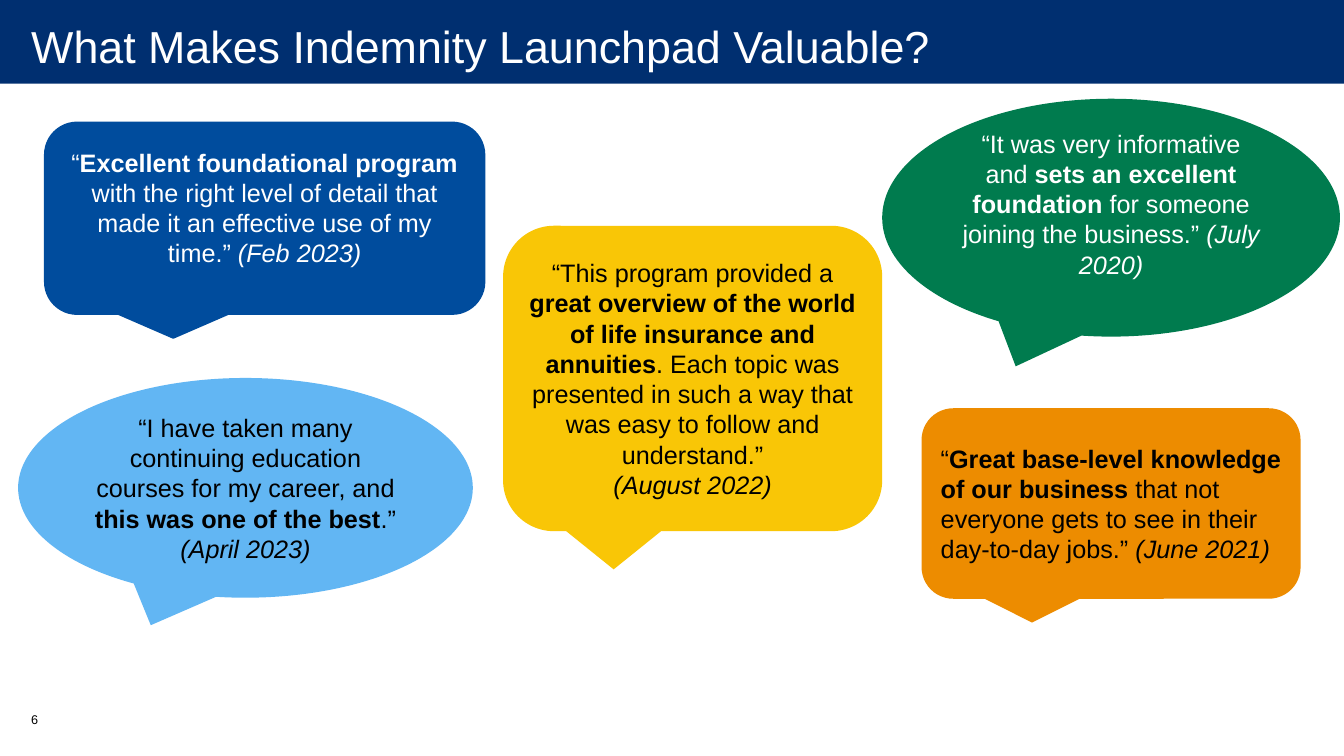
from pptx import Presentation
from pptx.dml.color import RGBColor
from pptx.enum.shapes import MSO_SHAPE
from pptx.enum.text import MSO_ANCHOR, PP_ALIGN
from pptx.util import Pt

EMU_PER_PX = 9144
SLIDE_WIDTH, SLIDE_HEIGHT = 1333, 750
FONT = "Arial"

BAR = MSO_SHAPE.RECTANGLE
ROUNDED = MSO_SHAPE.ROUNDED_RECTANGULAR_CALLOUT
OVAL = MSO_SHAPE.OVAL_CALLOUT
LEFT, CENTER = PP_ALIGN.LEFT, PP_ALIGN.CENTER
TOP, MIDDLE = MSO_ANCHOR.TOP, MSO_ANCHOR.MIDDLE

WHITE = RGBColor(0xFF, 0xFF, 0xFF)
BLACK = RGBColor(0x00, 0x00, 0x00)
NAVY = RGBColor(0x00, 0x2F, 0x70)
BLUE = RGBColor(0x00, 0x4C, 0x9D)
SKY = RGBColor(0x62, 0xB6, 0xF3)
YELLOW = RGBColor(0xF9, 0xC6, 0x06)
GREEN = RGBColor(0x00, 0x7B, 0x4E)
ORANGE = RGBColor(0xED, 0x8C, 0x00)

PLAIN, BOLD, ITALIC = "plain", "bold", "italic"

FEB_2023 = [[
    ("“", PLAIN), ("Excellent foundational program ", BOLD),
    ("with the right level of detail that made it an effective use of my time.” ", PLAIN),
    ("(Feb 2023)", ITALIC),
]]
APRIL_2023 = [
    [("“I have taken many continuing education courses for my career, and ", PLAIN),
     ("this was one of the best", BOLD), (".”", PLAIN)],
    [("(April 2023)", ITALIC)],
]
AUGUST_2022 = [
    [("“This program provided a ", PLAIN),
     ("great overview of the world of life insurance and annuities", BOLD),
     (". Each topic was presented in such a way that was easy to follow and understand.”", PLAIN)],
    [("(August 2022)", ITALIC)],
]
JULY_2020 = [[
    ("“It was very informative and ", PLAIN), ("sets an excellent foundation ", BOLD),
    ("for someone joining the business.” ", PLAIN), ("(July 2020)", ITALIC),
]]
JUNE_2021 = [[
    ("“", PLAIN), ("Great base-level knowledge of our business ", BOLD),
    ("that not everyone gets to see in their day-to-day jobs.” ", PLAIN),
    ("(June 2021)", ITALIC),
]]


def px(*lengths):
    """Turn px lengths into EMU."""
    return [length * EMU_PER_PX for length in lengths]


def write(holder, paragraphs, size=18, color=BLACK, align=CENTER, anchor=MIDDLE,
          insets=(10, 5, 10, 5)):
    """Fill a shape or text box with paragraphs of (text, style) runs."""
    frame = holder.text_frame
    frame.word_wrap = True
    frame.vertical_anchor = anchor
    (frame.margin_left, frame.margin_top,
     frame.margin_right, frame.margin_bottom) = px(*insets)
    for index, runs in enumerate(paragraphs):
        paragraph = frame.add_paragraph() if index else frame.paragraphs[0]
        paragraph.alignment = align
        for text, style in runs:
            run = paragraph.add_run()
            run.text = text
            run.font.name = FONT
            run.font.size = Pt(size)
            run.font.color.rgb = color
            run.font.bold = style == BOLD
            run.font.italic = style == ITALIC


def add_label(slide, box, paragraphs, **text_format):
    """Add a text box."""
    label = slide.shapes.add_textbox(*px(*box))
    write(label, paragraphs, **text_format)


def add_panel(slide, outline, box, fill):
    """Add a flat filled shape without a border."""
    panel = slide.shapes.add_shape(outline, *px(*box))
    panel.shadow.inherit = False
    panel.fill.solid()
    panel.fill.fore_color.rgb = fill
    panel.line.fill.background()
    return panel


def add_quote(slide, outline, box, fill, paragraphs, **text_format):
    """Add a speech bubble holding a participant quote."""
    bubble = add_panel(slide, outline, box, fill)
    write(bubble, paragraphs, **text_format)


def main():
    """Build and save the slide."""
    deck = Presentation()
    deck.slide_width, deck.slide_height = px(SLIDE_WIDTH, SLIDE_HEIGHT)
    slide = deck.slides.add_slide(deck.slide_layouts[6])

    add_panel(slide, BAR, (0, 0, SLIDE_WIDTH, 83), NAVY)
    add_label(slide, (1, 0, 1332, 91), [[("What Makes Indemnity Launchpad Valuable?", PLAIN)]],
              size=32, color=WHITE, align=LEFT, insets=(30, 0, 20, 0))
    add_label(slide, (21, 701, 49, 40), [[("6", PLAIN)]], size=9, align=LEFT, anchor=TOP)

    february_bubble = add_panel(slide, ROUNDED, (45, 122, 435, 189), BLUE)
    february_bubble.line.color.rgb = BLUE
    february_bubble.line.width = Pt(2)
    add_label(slide, (56, 141, 413, 162), FEB_2023, color=WHITE, anchor=TOP)

    add_quote(slide, OVAL, (18, 375, 451, 218), SKY, APRIL_2023)
    add_quote(slide, ROUNDED, (499, 224, 376, 303), YELLOW, AUGUST_2022)
    add_quote(slide, OVAL, (875, 98, 454, 236), GREEN, JULY_2020,
              color=WHITE, insets=(10, 0, 10, 28))
    add_quote(slide, ROUNDED, (914, 405, 376, 189), ORANGE, JUNE_2021, align=LEFT)

    deck.save("out.pptx")


if __name__ == "__main__":
    main()
